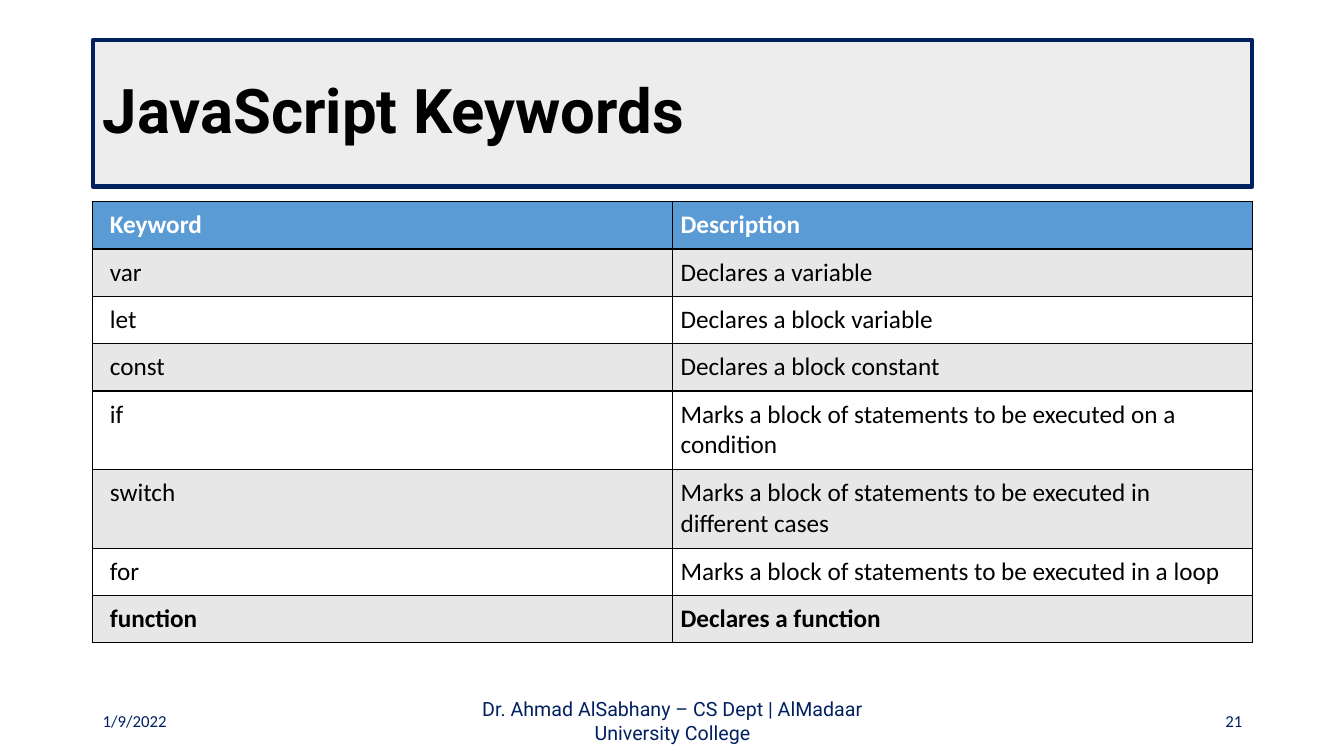
from lxml import etree
from pptx import Presentation
from pptx import util as u
from pptx.dml.color import RGBColor
from pptx.enum import shapes, text
from pptx.oxml import ns

PX = 9144
BLACK = RGBColor(0x00, 0x00, 0x00)
WHITE = RGBColor(0xFF, 0xFF, 0xFF)
NAVY = RGBColor(0x00, 0x20, 0x60)
BLUE = RGBColor(0x5B, 0x9B, 0xD5)
TITLE_GRAY = RGBColor(0xED, 0xED, 0xED)
BAND_GRAY = RGBColor(0xE7, 0xE7, 0xE7)
LEFT, WIDTH = 92, 1150


def write(frame, words, size=18, font="Calibri", color=BLACK, bold=False,
          align=text.PP_ALIGN.LEFT, anchor=None, spacing=None):
    frame.word_wrap = True
    if anchor is not None:
        frame.vertical_anchor = anchor
    para = frame.paragraphs[0]
    para.alignment = align
    para.line_spacing = spacing
    span = para.add_run()
    span.text = words
    span.font.size = u.Pt(size)
    span.font.name = font
    span.font.bold = bold
    span.font.color.rgb = color


def add_borders(cell, color, width):
    properties = cell._tc.get_or_add_tcPr()
    for index, side in enumerate(("lnL", "lnR", "lnT", "lnB")):
        line = etree.Element(ns.qn(f"a:{side}"), w=str(width))
        fill = etree.SubElement(line, ns.qn("a:solidFill"))
        etree.SubElement(fill, ns.qn("a:srgbClr"), val=str(color))
        properties.insert(index, line)


deck = Presentation()
deck.slide_width = 1333 * PX
deck.slide_height = 750 * PX
page = deck.slides.add_slide(deck.slide_layouts[6])

title = page.shapes.add_shape(shapes.MSO_SHAPE.RECTANGLE,
                              LEFT * PX, 40 * PX, WIDTH * PX, 145 * PX)
title.shadow.inherit = False
title.fill.solid()
title.fill.fore_color.rgb = TITLE_GRAY
title.line.color.rgb = NAVY
title.line.width = u.Pt(3)
write(title.text_frame, "JavaScript Keywords", size=44, font="Roboto", bold=True,
      anchor=text.MSO_ANCHOR.MIDDLE, spacing=0.9)

keywords = [
    ("Keyword", "Description", 47),
    ("var", "Declares a variable", 47),
    ("let", "Declares a block variable", 47),
    ("const", "Declares a block constant", 47),
    ("if", "Marks a block of statements to be executed on a condition", 78),
    ("switch", "Marks a block of statements to be executed in different cases", 78),
    ("for", "Marks a block of statements to be executed in a loop", 47),
    ("function", "Declares a function", 47),
]
total_height = sum(height for _, _, height in keywords)
table = page.shapes.add_table(len(keywords), 2, LEFT * PX, 200 * PX,
                              WIDTH * PX, total_height * PX).table
for row, (keyword, description, height) in enumerate(keywords):
    table.rows[row].height = height * PX
    header = row == 0
    for column, words in enumerate((keyword, description)):
        cell = table.cell(row, column)
        cell.margin_left = (17, 8)[column] * PX
        cell.margin_right = cell.margin_top = cell.margin_bottom = 8 * PX
        cell.fill.solid()
        cell.fill.fore_color.rgb = BLUE if header else (WHITE, BAND_GRAY)[row % 2]
        add_borders(cell, BLACK, u.Pt(1))
        write(cell.text_frame, words, color=WHITE if header else BLACK,
              bold=header or keyword == "function")

footers = [
    ("1/9/2022", 92, 300, 12, "Calibri", text.PP_ALIGN.LEFT),
    ("Dr. Ahmad AlSabhany – CS Dept | AlMadaar University College",
     442, 450, 14, "Roboto", text.PP_ALIGN.CENTER),
    ("21", 942, 300, 12, "Calibri", text.PP_ALIGN.RIGHT),
]
for words, left, width, size, font, align in footers:
    box = page.shapes.add_textbox(left * PX, 695 * PX, width * PX, 40 * PX)
    write(box.text_frame, words, size=size, font=font, color=NAVY, align=align,
          anchor=text.MSO_ANCHOR.MIDDLE)

deck.save("out.pptx")
